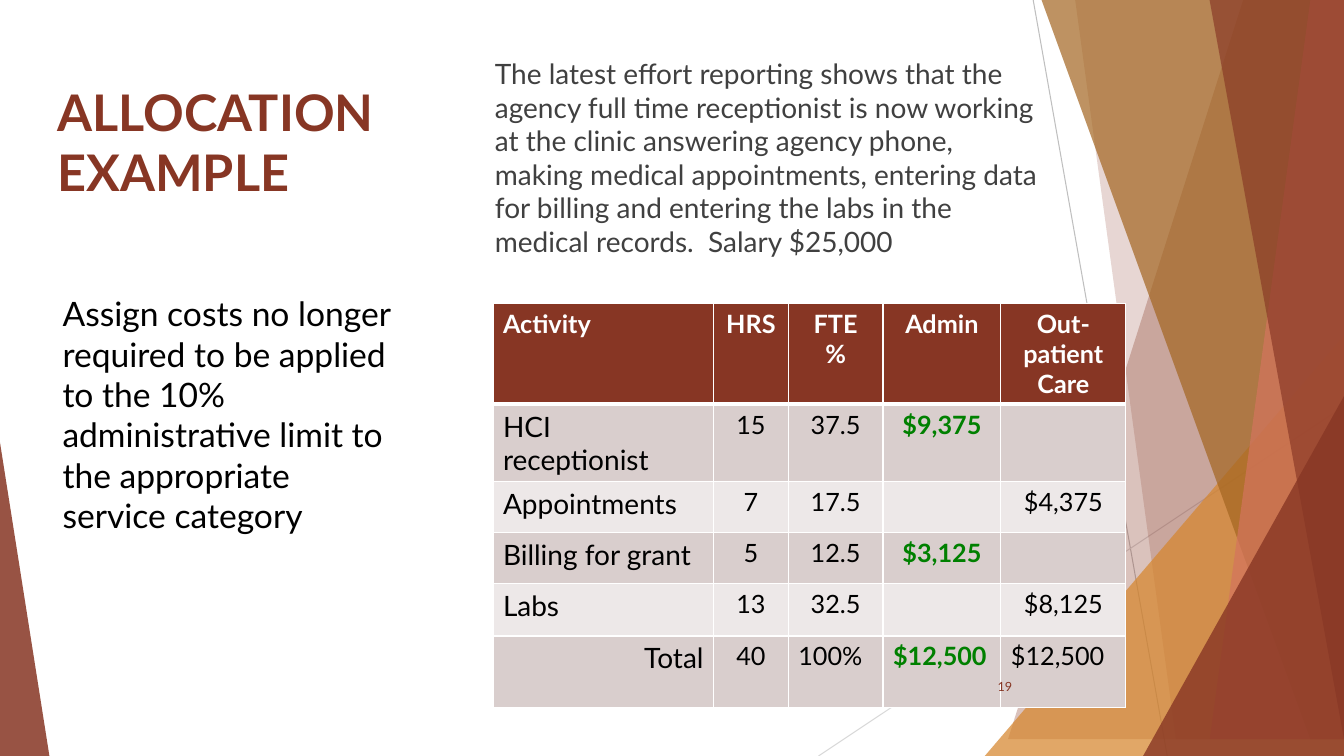
import pptx
import pptx.util
import pptx.oxml.ns
import pptx.dml.color
import pptx.enum.shapes
import pptx.enum.text
from lxml import etree

WIDE, HIGH = 40, 22.5
UNIT = 304800
FONT = "Lato"
COLORS = {
    "rust": "873624", "amber": "D6862D", "brown": "A36520", "coral": "D4745E",
    "white": "FFFFFF", "black": "000000", "text": "404040", "green": "008000",
    "dark": "D9CECD", "light": "EDE8E8", "gray": "BFBFBF", "pale": "D9D9D9",
}
ALIGN = pptx.enum.text.PP_ALIGN
ANCHOR = pptx.enum.text.MSO_ANCHOR
COLS = [6.57, 2.22, 2.82, 3.51, 3.72]
ROWS = [2.82, 2.1, 1.5, 1.53, 1.56, 2.13]
DATA = [
    ["Activity", "HRS", "FTE\n%", "Admin", "Out-patient Care"],
    ["HCI receptionist", "15", "37.5", "$9,375", ""],
    ["Appointments", "7", "17.5", "", "$4,375"],
    ["Billing for grant", "5", "12.5", "$3,125", ""],
    ["Labs", "13", "32.5", "", "$8,125"],
    ["Total", "40", "100%", "$12,500", "$12,500"],
]


def grid(*cells):
    return [pptx.util.Emu(round(cell * UNIT)) for cell in cells]


def color(name):
    return pptx.dml.color.RGBColor.from_string(COLORS[name])


def add_tag(parent, name, **attrs):
    return etree.SubElement(parent, pptx.oxml.ns.qn(name), attrs)


def add_run(para, text, size, tint, bold=False):
    run = para.add_run()
    run.text = text
    font = run.font
    font.name, font.size, font.bold = FONT, pptx.util.Pt(size), bold
    font.color.rgb = color(tint)


def paint(shape, tint, alpha):
    shape.shadow.inherit = False
    shape.line.fill.background()
    shape.fill.solid()
    shape.fill.fore_color.rgb = color(tint)
    fill = shape.element.spPr.find(".//" + pptx.oxml.ns.qn("a:srgbClr"))
    add_tag(fill, "a:alpha", val=str(alpha * 1000))


def add_line(slide, ends, tint):
    kind = pptx.enum.shapes.MSO_CONNECTOR.STRAIGHT
    line = slide.shapes.add_connector(kind, *grid(*ends))
    line.line.color.rgb = color(tint)
    line.line.width = pptx.util.Pt(0.75)
    add_tag(line.element.spPr, "a:effectLst")


def add_band(slide, top, base, tint, alpha):
    form = slide.shapes.build_freeform(top, 0, scale=UNIT)
    form.add_line_segments([(WIDE, 0), (WIDE, HIGH), (base, HIGH)], close=True)
    paint(form.convert_to_shape(), tint, alpha)


def add_peak(slide, left, top, width, tip, tint, alpha):
    kind = pptx.enum.shapes.MSO_SHAPE.ISOSCELES_TRIANGLE
    peak = slide.shapes.add_shape(kind, *grid(left, top, width, HIGH - top))
    peak.adjustments[0] = tip
    paint(peak, tint, alpha)


def add_decor(slide):
    add_line(slide, (30.75, 0, 34.74, HIGH), "gray")
    add_line(slide, (WIDE, 12.09, 24.36, HIGH), "pale")
    add_band(slide, 36.84, 30.12, "rust", 30)
    add_band(slide, 31.5, 35.49, "rust", 20)
    add_peak(slide, 29.31, 9.99, 10.69, 1, "amber", 72)
    add_band(slide, 30.63, 38.73, "brown", 70)
    add_band(slide, 39.09, 35.76, "coral", 70)
    add_band(slide, 35.88, 39.54, "rust", 65)
    add_peak(slide, 34.02, 11.79, 5.98, 1, "rust", 80)
    add_peak(slide, 0, 13.17, 1.47, 0, "rust", 85)


def set_frame(shape, anchor):
    frame = shape.text_frame
    frame.word_wrap = True
    frame.auto_size = pptx.enum.text.MSO_AUTO_SIZE.NONE
    frame.vertical_anchor = anchor
    return frame.paragraphs[0]


def place(holder, box, anchor):
    holder.left, holder.top, holder.width, holder.height = grid(*box)
    holder.element.getparent().append(holder.element)
    para = set_frame(holder, anchor)
    para.alignment = ALIGN.LEFT
    return para


def fill_title(holder):
    para = place(holder, (1.41, 1.95, 12.66, 4.2), ANCHOR.BOTTOM)
    add_run(para, "ALLOCATION ", 36, "rust", True)
    para.add_line_break()
    add_run(para, "EXAMPLE", 36, "rust", True)


def fill_body(holder, box, anchor, text, size, tint, level=0):
    para = place(holder, box, anchor)
    para.level = level
    para.space_before = pptx.util.Pt(10)
    props = para._p.get_or_add_pPr()
    props.set("marL", "0")
    props.set("indent", "0")
    add_tag(props, "a:buNone")
    add_run(para, text, size, tint)


def add_edges(cell, head):
    props = cell._tc.get_or_add_tcPr()
    for side in "LRTB":
        width = 3 if head and side == "B" else 1
        edge = add_tag(props, "a:ln" + side, w=str(width * 12700))
        fill = add_tag(edge, "a:solidFill")
        add_tag(fill, "a:srgbClr", val=COLORS["white"])


def cell_align(row, col):
    if col == 0:
        return ALIGN.RIGHT if row == len(ROWS) - 1 else ALIGN.LEFT
    return ALIGN.LEFT if row == len(ROWS) - 1 and col > 1 else ALIGN.CENTER


def fill_cell(cell, row, col, text):
    head, admin = row == 0, col == 3
    add_edges(cell, head)
    cell.fill.solid()
    shade = "rust" if head else "dark" if row % 2 else "light"
    cell.fill.fore_color.rgb = color(shade)
    size = 20 if col == 0 and not head else 18
    tint = "white" if head else "green" if admin else "black"
    frame = cell.text_frame
    for spot, part in enumerate(text.split("\n")):
        para = frame.add_paragraph() if spot else frame.paragraphs[0]
        para.alignment = cell_align(row, col)
        if part:
            add_run(para, part, size, tint, head or admin)


def add_costs(slide):
    box = grid(14.67, 9.03, sum(COLS), sum(ROWS))
    table = slide.shapes.add_table(len(ROWS), len(COLS), *box).table
    for col, width in zip(table.columns, grid(*COLS)):
        col.width = width
    for row, height in zip(table.rows, grid(*ROWS)):
        row.height = height
    for row, line in enumerate(DATA):
        for col, text in enumerate(line):
            fill_cell(table.cell(row, col), row, col, text)


def add_page(slide):
    box = slide.shapes.add_textbox(*grid(28.17, 19.83, 2.25, 1.2))
    para = set_frame(box, ANCHOR.MIDDLE)
    para.alignment = ALIGN.RIGHT
    add_run(para, "19", 9, "rust")


def main():
    deck = pptx.Presentation()
    deck.slide_width, deck.slide_height = grid(WIDE, HIGH)
    slide = deck.slides.add_slide(deck.slide_layouts[7])
    title, body, note = slide.placeholders
    add_decor(slide)
    fill_title(title)
    fill_body(body, (14.43, 0.87, 16.89, 7.62), ANCHOR.MIDDLE,
              "The latest effort reporting shows that the agency full time "
              "receptionist is now working at the clinic answering agency "
              "phone, making medical appointments, entering data for billing "
              "and entering the labs in the medical records.  Salary $25,000",
              20, "text")
    fill_body(note, (1.56, 8.58, 10.68, 9.69), ANCHOR.TOP,
              "Assign costs no longer required to be applied to the 10% "
              "administrative limit to the appropriate service category",
              24, "black", 1)
    add_costs(slide)
    add_page(slide)
    deck.save("out.pptx")


if __name__ == "__main__":
    main()
